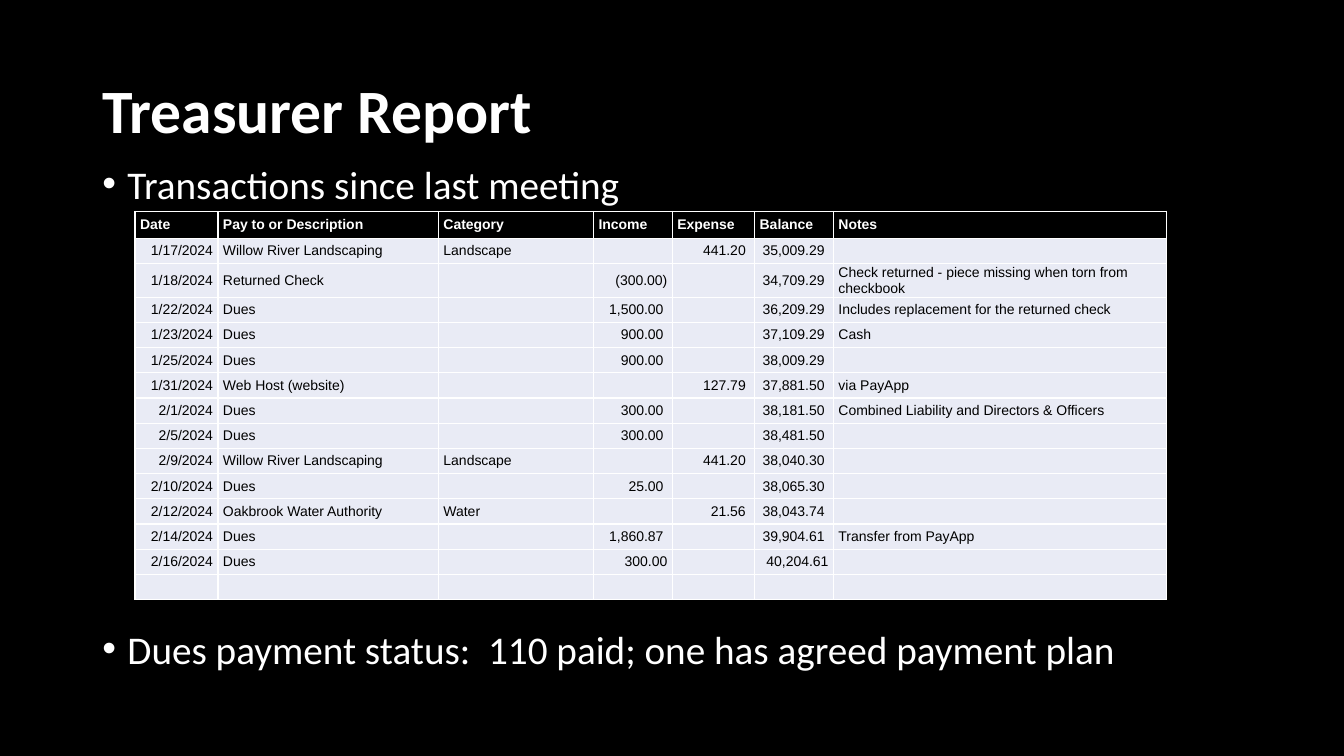
from lxml import etree
from pptx import Presentation
from pptx.dml.color import RGBColor
from pptx.enum import text as t
from pptx.oxml.ns import qn
from pptx.util import Pt

COLORS = {"black": "000000", "white": "FFFFFF", "row": "E9EBF5"}
TITLE = "Treasurer Report"
BULLETS = [
    "Transactions since last meeting",
    "Dues payment status:  110 paid; one has agreed payment plan",
]
HEADER = ("Date", "Pay to or Description", "Category", "Income", "Expense", "Balance", "Notes")
TRANSACTIONS = [
    ("1/17/2024", "Willow River Landscaping", "Landscape", "", "441.20", "35,009.29", ""),
    ("1/18/2024", "Returned Check", "", "(300.00)", "", "34,709.29",
     "Check returned - piece missing when torn from checkbook"),
    ("1/22/2024", "Dues", "", "1,500.00", "", "36,209.29",
     "Includes replacement for the returned check"),
    ("1/23/2024", "Dues", "", "900.00", "", "37,109.29", "Cash"),
    ("1/25/2024", "Dues", "", "900.00", "", "38,009.29", ""),
    ("1/31/2024", "Web Host (website)", "", "", "127.79", "37,881.50", "via PayApp"),
    ("2/1/2024", "Dues", "", "300.00", "", "38,181.50",
     "Combined Liability and Directors & Officers"),
    ("2/5/2024", "Dues", "", "300.00", "", "38,481.50", ""),
    ("2/9/2024", "Willow River Landscaping", "Landscape", "", "441.20", "38,040.30", ""),
    ("2/10/2024", "Dues", "", "25.00", "", "38,065.30", ""),
    ("2/12/2024", "Oakbrook Water Authority", "Water", "", "21.56", "38,043.74", ""),
    ("2/14/2024", "Dues", "", "1,860.87", "", "39,904.61", "Transfer from PayApp"),
    ("2/16/2024", "Dues", "", "300.00", "", "40,204.61", ""),
    ("",) * len(HEADER),
]
COL_WIDTHS = (59.2, 157.5, 110.8, 56.3, 58.8, 56.3, 237.7)
DATE, AMOUNTS = 0, (3, 4, 5)
LAST_ENTRY = len(TRANSACTIONS) - 1
HEADER_H, ROW_H = 18.5, 18
INSET, AMOUNT_INSET = 3.6, 6.4
LEFT, WIDTH = 66, 828


def rgb(name):
    return RGBColor.from_string(COLORS[name])


def put(p, text, size, font="Calibri", color="white", bold=False, align=None, spacing=None):
    p.alignment = align
    p.line_spacing = spacing
    if not text:
        etree.SubElement(p._p, qn("a:endParaRPr"), sz=str(size * 100))
        return
    r = p.add_run()
    r.text = text
    r.font.size, r.font.name, r.font.bold = Pt(size), font, bold
    r.font.color.rgb = rgb(color)


def add_box(s, top, height, anchor):
    tf = s.shapes.add_textbox(Pt(LEFT), Pt(top), Pt(WIDTH), Pt(height)).text_frame
    tf.word_wrap = True
    tf.vertical_anchor = anchor
    return tf


def add_bullet(p):
    pPr = p._p.get_or_add_pPr()
    pPr.set("marL", str(Pt(18)))
    pPr.set("indent", str(-Pt(18)))
    etree.SubElement(pPr, qn("a:buFont"), typeface="Arial")
    etree.SubElement(pPr, qn("a:buChar"), char="•")


def add_borders(cell):
    tcPr = cell._tc.get_or_add_tcPr()
    for side in ("lnL", "lnR", "lnT", "lnB"):
        ln = etree.SubElement(tcPr, qn("a:" + side), w=str(Pt(1)))
        fill = etree.SubElement(ln, qn("a:solidFill"))
        etree.SubElement(fill, qn("a:srgbClr"), val=COLORS["white"])


def fill_cell(cell, text, row, col):
    head = row == 0
    padded = col in AMOUNTS and 0 < row < LAST_ENTRY and not text.startswith("(")
    add_borders(cell)
    cell.fill.solid()
    cell.fill.fore_color.rgb = rgb("black" if head else "row")
    cell.vertical_anchor = t.MSO_ANCHOR.MIDDLE
    cell.margin_left = Pt(INSET)
    cell.margin_right = Pt(AMOUNT_INSET if padded else INSET)
    cell.margin_top = cell.margin_bottom = Pt(INSET if head else 0)
    right = not head and (col == DATE or col in AMOUNTS)
    put(cell.text_frame.paragraphs[0], text, 10, font="Arial",
        color="white" if head else "black", bold=head,
        align=t.PP_ALIGN.RIGHT if right else t.PP_ALIGN.LEFT)


def add_ledger(s):
    rows = [HEADER] + TRANSACTIONS
    heights = [HEADER_H] + [ROW_H] * len(TRANSACTIONS)
    table = s.shapes.add_table(len(rows), len(HEADER), Pt(96.5), Pt(151),
                               Pt(sum(COL_WIDTHS)), Pt(sum(heights))).table
    table.horz_banding = False
    for column, width in zip(table.columns, COL_WIDTHS):
        column.width = Pt(width)
    for i, (values, height) in enumerate(zip(rows, heights)):
        table.rows[i].height = Pt(height)
        for j, value in enumerate(values):
            fill_cell(table.cell(i, j), value, i, j)


def main():
    prs = Presentation()
    prs.slide_width, prs.slide_height = Pt(960), Pt(540)
    s = prs.slides.add_slide(prs.slide_layouts[6])
    s.background.fill.solid()
    s.background.fill.fore_color.rgb = rgb("black")

    title = add_box(s, 28.75, 104.4, t.MSO_ANCHOR.MIDDLE)
    put(title.paragraphs[0], TITLE, 44, bold=True, spacing=0.9)

    body = add_box(s, 117.4, 393.8, t.MSO_ANCHOR.TOP)
    for i, bullet in enumerate(BULLETS):
        p = body.add_paragraph() if i else body.paragraphs[0]
        add_bullet(p)
        put(p, bullet, 28, spacing=0.8)
        if i:
            p.space_before = Pt(305)

    add_ledger(s)
    prs.save("out.pptx")


if __name__ == "__main__":
    main()
